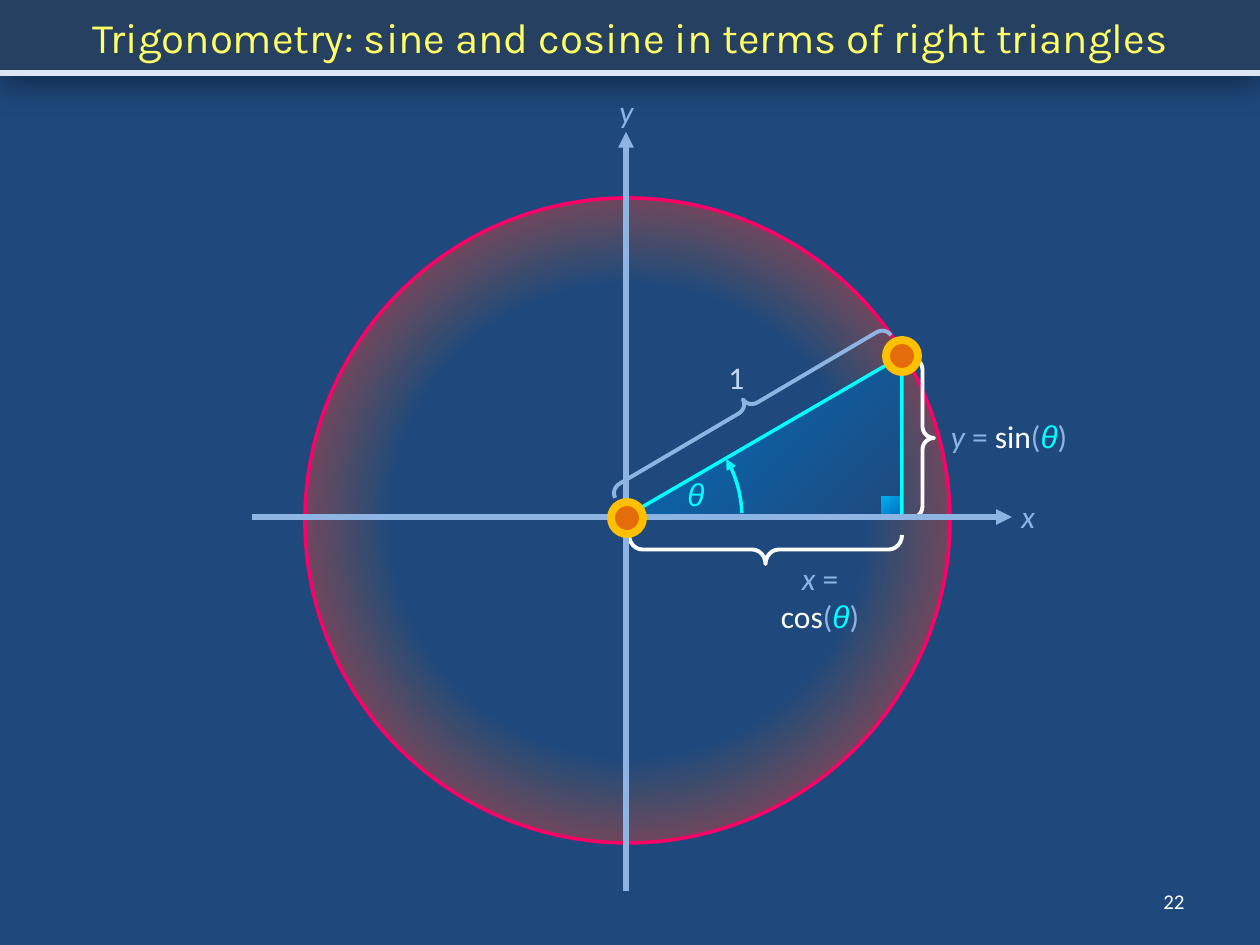
from math import cos, radians, sin

from lxml.etree import SubElement
from pptx import Presentation
from pptx.dml.color import RGBColor
from pptx.enum.shapes import MSO_CONNECTOR, MSO_SHAPE as SHAPE
from pptx.enum.text import MSO_ANCHOR as ANCHOR, MSO_AUTO_SIZE, PP_ALIGN as ALIGN
from pptx.oxml import parse_xml
from pptx.oxml.ns import nsdecls, qn
from pptx.util import Pt

PX = 7257.14  # EMU per px, 126 px to the inch
COLORS = {
    "background": "1F497D", "banner": "254061", "title": "FFFF66", "rule": "DCE6F2",
    "axis": "8EB4E3", "cyan": "00FFFF", "white": "FFFFFF", "unit": "C6D9F1",
    "circle": "FF0066", "orange": "E46C0A", "gold": "FFC000",
    "blue": "0070C0", "sky": "00B0F0", "black": "000000",
}


def emu(*lengths):
    return [round(length * PX) for length in lengths]


def write(frame, runs, size=18, align=ALIGN.LEFT, anchor=ANCHOR.TOP, wrap=False):
    """Fill a text frame with (text, color, font, italic) runs."""
    frame.word_wrap = wrap
    frame.auto_size = MSO_AUTO_SIZE.NONE
    frame.vertical_anchor = anchor
    paragraph = frame.paragraphs[0]
    paragraph.alignment = align
    for text, color, font, italic in runs:
        run = paragraph.add_run()
        run.text = text
        run.font.name, run.font.size, run.font.italic = font, Pt(size), italic
        run.font.color.rgb = RGBColor.from_string(COLORS[color])


prs = Presentation()
prs.slide_width, prs.slide_height = emu(1260, 945)
slide = prs.slides.add_slide(prs.slide_layouts[5])
shapes = slide.shapes
slide.background.fill.solid()
slide.background.fill.fore_color.rgb = RGBColor.from_string(COLORS["background"])

# Title banner with its shadow
title = shapes.title
title.left, title.top, title.width, title.height = emu(0, 0, 1260, 73)
title.fill.solid()
title.fill.fore_color.rgb = RGBColor.from_string(COLORS["banner"])
title._element.spPr.append(parse_xml(
    f'<a:effectLst {nsdecls("a")}><a:outerShdw blurRad="254000" dist="63500" dir="5400000">'
    f'<a:srgbClr val="{COLORS["black"]}"><a:alpha val="50000"/></a:srgbClr>'
    '</a:outerShdw></a:effectLst>'))
write(title.text_frame,
      [("Trigonometry: sine and cosine in terms of right triangles", "title", "Karla", False)],
      size=24, align=ALIGN.CENTER, anchor=ANCHOR.MIDDLE, wrap=True)

# Unit circle, glowing towards its rim
unit_circle = shapes.add_shape(SHAPE.OVAL, *emu(305, 198, 645, 645))
unit_circle._element.spPr.append(parse_xml(
    f'<a:gradFill {nsdecls("a")}><a:gsLst>'
    f'<a:gs pos="52000"><a:srgbClr val="{COLORS["orange"]}"><a:alpha val="0"/></a:srgbClr></a:gs>'
    f'<a:gs pos="100000"><a:srgbClr val="{COLORS["circle"]}"/></a:gs></a:gsLst>'
    '<a:path path="circle"><a:fillToRect l="50000" t="50000" r="50000" b="50000"/></a:path>'
    '</a:gradFill>'))
unit_circle.line.color.rgb = RGBColor.from_string(COLORS["circle"])
unit_circle.line.width = Pt(2)
unit_circle.shadow.inherit = False

# Right triangle and its right-angle mark
triangle = shapes.add_shape(SHAPE.ISOSCELES_TRIANGLE, *emu(625, 356, 277, 161))
triangle.adjustments[0] = 1
triangle.line.color.rgb = RGBColor.from_string(COLORS["cyan"])
triangle.line.width = Pt(2)
right_angle = shapes.add_shape(SHAPE.RECTANGLE, *emu(881, 496, 19, 19))
right_angle.line.fill.background()
for part, colors in [(triangle, ("blue", "background")), (right_angle, ("sky", "blue"))]:
    part.shadow.inherit = False
    part.fill.gradient()
    part.fill.gradient_angle = 315  # counter-clockwise: towards the lower right
    for stop, position, color in zip(part.fill.gradient_stops, (0, 1), colors):
        stop.position = position
        stop.color.rgb = RGBColor.from_string(COLORS[color])

# Braces: hypotenuse, cosine, sine
for kind, box, rotation, curl, color in [
    (SHAPE.LEFT_BRACE, (738, 248, 20, 320), 59.5, 0.55, "axis"),
    (SHAPE.RIGHT_BRACE, (751, 413, 29, 273), 90, 0.46, "white"),
    (SHAPE.RIGHT_BRACE, (911, 358, 23, 160), 0, 0.5, "white"),
]:
    brace = shapes.add_shape(kind, *emu(*box))
    brace.rotation = rotation
    brace.adjustments[0] = curl
    brace.fill.background()
    brace.line.color.rgb = RGBColor.from_string(COLORS[color])
    brace.line.width = Pt(2.25)
    brace.shadow.inherit = False

# Angle arc from the x axis up to the hypotenuse
arc_points = [emu(626 + 116 * cos(radians(a)), 517 - 116 * sin(radians(a)))
              for a in range(2, 31, 2)]
builder = shapes.build_freeform(*arc_points[0])
builder.add_line_segments(arc_points[1:], close=False)
angle_arc = builder.convert_to_shape()
angle_arc.fill.background()
angle_arc.line.color.rgb = RGBColor.from_string(COLORS["cyan"])
angle_arc.line.width = Pt(2)
angle_arc.shadow.inherit = False
SubElement(angle_arc.line._get_or_add_ln(), qn("a:tailEnd"), type="triangle")

# Rule under the title, then the axes
for ends, color, arrow in [
    ((0, 73, 1260, 73), "rule", False),
    ((252, 517, 1012, 517), "axis", True),
    ((626, 891, 626, 132), "axis", True),
]:
    line = shapes.add_connector(MSO_CONNECTOR.STRAIGHT, *emu(*ends))
    line.line.color.rgb = RGBColor.from_string(COLORS[color])
    line.line.width = Pt(3)
    if arrow:
        SubElement(line.line._get_or_add_ln(), qn("a:tailEnd"), type="triangle")
    SubElement(line._element.spPr, qn("a:effectLst"))

# Labels
theta = ("θ", "cyan", "Arial", True)


def equation(variable, function):
    return [(variable, "axis", "Calibri", True), (" = ", "axis", "Calibri", False),
            (function, "white", "Calibri", False), ("(", "axis", "Calibri", False),
            theta, (")", "axis", "Calibri", False)]


for box, runs, style in [
    ((716, 352, 42, 50), [("1", "unit", "Calibri", False)], {}),
    ((675, 469, 43, 50), [theta], {}),
    ((1009, 491, 39, 50), [("x", "axis", "Calibri", True)], {}),
    ((607, 86, 39, 50), [("y", "axis", "Calibri", True)], {}),
    ((760, 553, 120, 50), equation("x", "cos"), {"align": ALIGN.CENTER, "wrap": True}),
    ((937, 411, 144, 50), equation("y", "sin"), {"align": ALIGN.CENTER}),
    ((903, 876, 294, 50), [("22", "white", "Calibri", False)],
     {"size": 12, "align": ALIGN.RIGHT, "anchor": ANCHOR.MIDDLE, "wrap": True}),
]:
    write(shapes.add_textbox(*emu(*box)).text_frame, runs, **style)

# Points on the circle and at the origin
for center_x, center_y in [(902, 356), (627, 518)]:
    point = shapes.add_shape(SHAPE.OVAL, *emu(center_x - 16, center_y - 16, 32, 32))
    point.fill.solid()
    point.fill.fore_color.rgb = RGBColor.from_string(COLORS["orange"])
    point.line.color.rgb = RGBColor.from_string(COLORS["gold"])
    point.line.width = Pt(4.5)
    point.shadow.inherit = False

prs.save("out.pptx")
